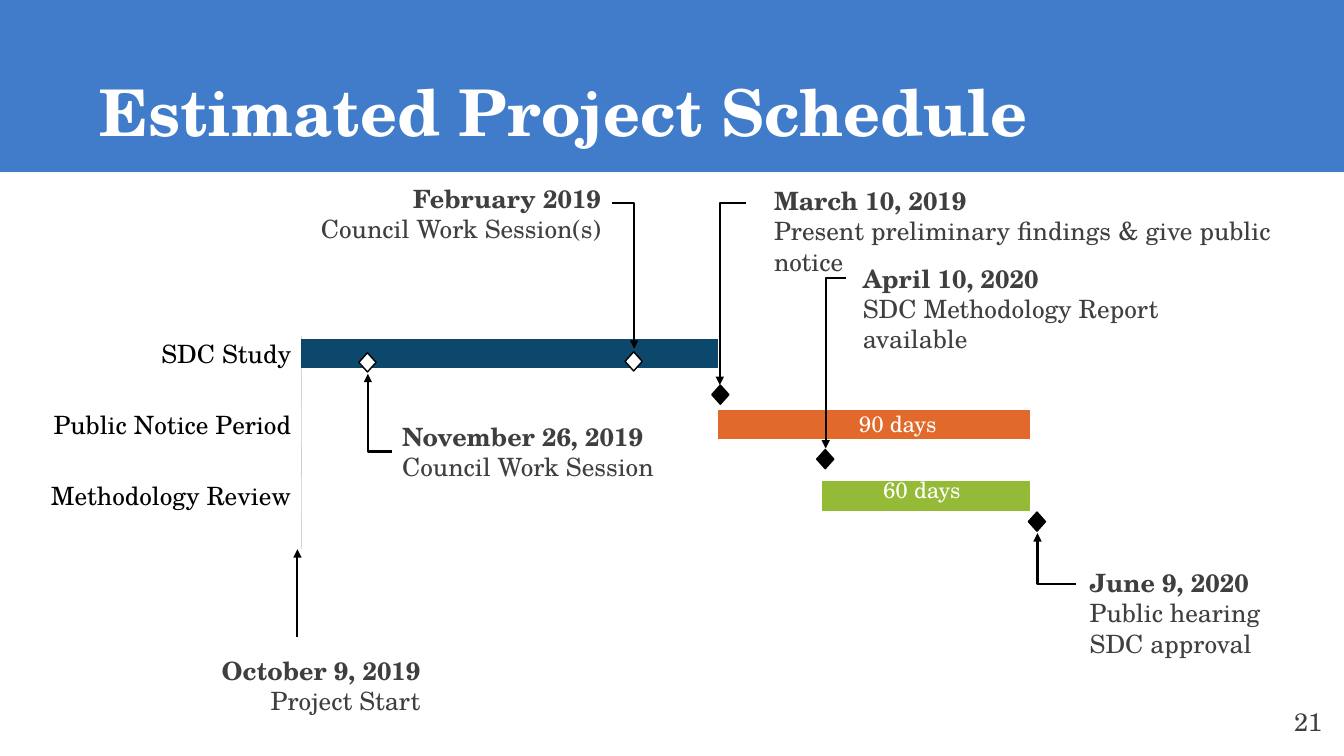
from pptx import Presentation
from pptx.chart.data import CategoryChartData
from pptx.dml.color import RGBColor
from pptx.enum.chart import XL_CHART_TYPE, XL_TICK_LABEL_POSITION, XL_TICK_MARK
from pptx.enum.shapes import MSO_CONNECTOR, MSO_SHAPE
from pptx.enum.text import MSO_ANCHOR, PP_ALIGN
from pptx.oxml import parse_xml
from pptx.oxml.ns import nsdecls, qn
from pptx.util import Inches, Pt

FACE = "TeX Gyre Schola"
BLUE, NAVY, ORANGE, GREEN = "407CCA", "0B486B", "E1692C", "95BA38"
WHITE, BLACK, GRAY, PALE = "FFFFFF", "000000", "3F3F3F", "D9D9D9"
LEFT, MID, RIGHT = PP_ALIGN.LEFT, PP_ALIGN.CENTER, PP_ALIGN.RIGHT


def color(code):
    return RGBColor.from_string(code)


def style(font, size, code, bold=False):
    values = {"name": FACE, "size": Pt(size), "bold": bold}
    for key, value in values.items():
        setattr(font, key, value)
    font.color.rgb = color(code)


def paint(part, code):
    if code is None:
        part.fill.background()
    else:
        part.fill.solid()
        part.fill.fore_color.rgb = color(code)


def add_form(slide, kind, box, fill, line):
    form = slide.shapes.add_shape(kind, *map(Inches, box))
    form.shadow.inherit = False
    paint(form, fill)
    form.line.color.rgb = color(line)
    form.line.width = Pt(1)
    return form


def add_text(slide, box, lines, size=18, code=GRAY, align=LEFT, head=False):
    frame = slide.shapes.add_textbox(*map(Inches, box)).text_frame
    frame.word_wrap = True
    for i, line in enumerate(lines):
        para = frame.add_paragraph() if i else frame.paragraphs[0]
        para.alignment = align
        run = para.add_run()
        run.text = line
        style(run.font, size, code, head and i == 0)


# Arrow that leaves sideways and turns once toward its tip
def add_arrow(slide, start, tip):
    bent = start[0] != tip[0]
    kind = MSO_CONNECTOR.ELBOW if bent else MSO_CONNECTOR.STRAIGHT
    arrow = slide.shapes.add_connector(kind, *map(Inches, start + tip))
    arrow.line.color.rgb = color(BLACK)
    arrow.line.width = Pt(1.5)
    props = arrow.element.spPr
    if bent:
        props.find(qn("a:prstGeom")).set("prst", "bentConnector2")
    line = props.find(qn("a:ln"))
    line.append(parse_xml(f'<a:tailEnd {nsdecls("a")} type="triangle"/>'))
    props.append(parse_xml(f'<a:effectLst {nsdecls("a")}/>'))


# Title on its colored band
def add_header(slide, box):
    x, y, w, h = box
    band = add_form(slide, MSO_SHAPE.RECTANGLE, box, BLUE, BLUE)
    title = slide.shapes.title
    title.element.addprevious(band.element)
    place = {"left": x + 0.89, "top": y + 0.82, "width": 11.19, "height": 1.44}
    for key, value in place.items():
        setattr(title, key, Inches(value))
    frame = title.text_frame
    frame.text = "Estimated Project Schedule"
    frame.vertical_anchor = MSO_ANCHOR.TOP
    para = frame.paragraphs[0]
    para.alignment = LEFT
    style(para.runs[0].font, 46, WHITE, True)


# Stacked bars: lead time, gap, then review period
def add_bars(slide, box):
    data = CategoryChartData()
    data.categories = ["", "Methodology Review", "", "Public Notice Period", "", "SDC Study"]
    rows = [
        ("Series 1", (0, 100, 0, 100, 0, 100), NAVY, [None] * 4),
        ("Series 2", (0, 25, 0, 0, 0, 25), WHITE, [None] * 3),
        ("Series 3", (0, 50, 0, 75, 0, 50), WHITE, [GREEN, GREEN, ORANGE, ORANGE]),
    ]
    for name, values, *_ in rows:
        data.add_series(name, values)
    chart = slide.shapes.add_chart(XL_CHART_TYPE.BAR_STACKED, *map(Inches, box), data).chart
    chart.has_legend = chart.has_title = False
    style(chart.font, 10, BLACK)
    chart.font.name = "Calibri"
    plot = chart.plots[0]
    plot.gap_width, plot.overlap, plot.vary_by_categories = 21, 100, False
    for series, (_, _, fill, points) in zip(plot.series, rows):
        paint(series.format, fill)
        for i, code in enumerate(points):
            paint(series.points[i].format, code)

    # Axes
    axis = chart.category_axis
    axis.major_tick_mark = XL_TICK_MARK.NONE
    axis.tick_label_position = XL_TICK_LABEL_POSITION.LOW
    axis.format.line.color.rgb = color(PALE)
    axis.format.line.width = Pt(0.75)
    style(axis.tick_labels.font, 18, BLACK)
    scale = chart.value_axis
    scale.minimum_scale, scale.maximum_scale = 0, 200
    scale.has_major_gridlines = scale.visible = False

    # Fixed plot area inside the box
    x, y, w, h = box
    area = {"x": 2.66 / w, "y": 0.05 / h, "w": 8.27 / w, "h": 2.12 / h}
    tags = '<c:layoutTarget val="inner"/><c:xMode val="edge"/><c:yMode val="edge"/>'
    tags += "".join(f'<c:{key} val="{value:.3f}"/>' for key, value in area.items())
    inner = chart.element.find(".//" + qn("c:plotArea"))
    for old in inner.findall(qn("c:layout")):
        inner.remove(old)
    inner.insert(0, parse_xml(
        f'<c:layout {nsdecls("c")}><c:manualLayout>{tags}</c:manualLayout></c:layout>'))


# Dated events: text box, lines, alignment, arrow start and tip
EVENTS = [
    ((2.96, 1.77, 3.1, 0.71), ["February 2019", "Council Work Session(s)"],
     RIGHT, (6.07, 2.01), (6.29, 3.46)),
    ((7.58, 1.79, 5.83, 0.71),
     ["March 10, 2019", "Present preliminary findings & give public notice"],
     LEFT, (7.4, 2.01), (7.14, 3.82)),
    ((8.46, 2.56, 3.67, 1.01), ["April 10, 2020", "SDC Methodology Report available"],
     LEFT, (8.39, 2.76), (8.19, 4.45)),
    ((3.89, 4.13, 3.07, 0.71), ["November 26, 2019", "Council Work Session"],
     LEFT, (3.89, 4.48), (3.65, 3.71)),
    ((10.71, 5.58, 2.27, 1.01), ["June 9, 2020", "Public hearing SDC approval"],
     LEFT, (10.67, 5.79), (10.29, 5.29)),
    ((1.63, 6.45, 2.64, 0.71), ["October 9, 2019", "Project Start"],
     RIGHT, (2.95, 6.32), (2.95, 5.45)),
]
MARKS = [(3.56, 3.5, WHITE), (6.2, 3.49, WHITE), (7.06, 3.82, BLACK),
         (8.1, 4.46, BLACK), (10.2, 5.08, BLACK)]


def add_events(slide, box):
    left, top = box[:2]

    def shift(spot):
        return (left + spot[0], top + spot[1]) + tuple(spot[2:])

    for x, y, fill in MARKS:
        add_form(slide, MSO_SHAPE.DIAMOND, shift((x, y, 0.17, 0.19)), fill, BLACK)
    for spot, lines, align, start, tip in EVENTS:
        add_text(slide, shift(spot), lines, align=align, head=True)
        add_arrow(slide, shift(start), shift(tip))
    # Bar lengths
    for x, y, span in [(8.42, 4.02, "90 days"), (8.66, 4.67, "60 days")]:
        add_text(slide, shift((x, y, 1.17, 0.37)), [span], 16, WHITE)


def main():
    deck = Presentation()
    deck.slide_width, deck.slide_height = Inches(13.33), Inches(7.5)
    slide = deck.slides.add_slide(deck.slide_layouts[5])
    add_header(slide, (0, -0.15, 13.33, 1.85))
    add_bars(slide, (0.33, 3.28, 11.5, 2.22))
    add_events(slide, (0, 0, 13.33, 7.5))
    add_text(slide, (12.62, 6.96, 0.71, 0.4), ["21"], align=MID)
    deck.save("out.pptx")


if __name__ == "__main__":
    main()
